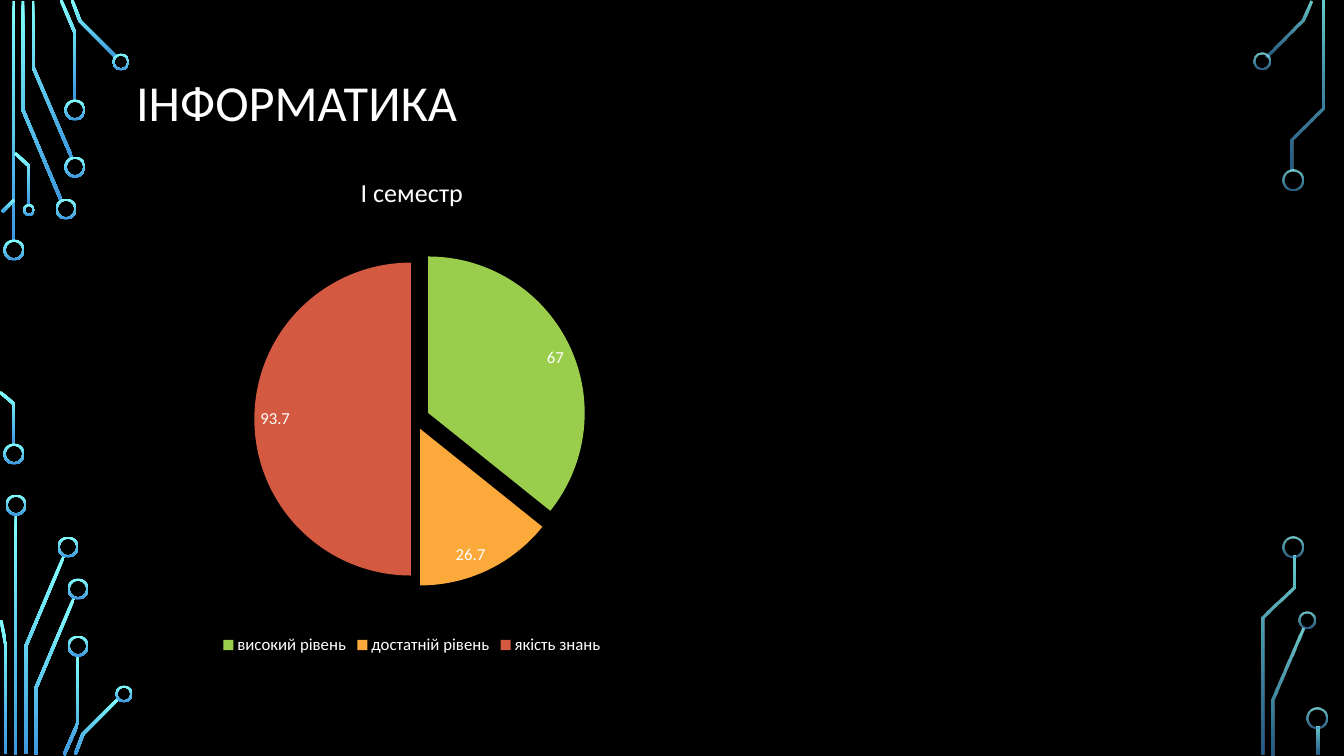
import math

import pptx
import pptx.chart.data
import pptx.dml.color
import pptx.enum.chart
import pptx.enum.shapes
import pptx.enum.text
import pptx.oxml
import pptx.oxml.ns
import pptx.util

RGBColor = pptx.dml.color.RGBColor
BLACK = RGBColor(0x00, 0x00, 0x00)
WHITE = RGBColor(0xFF, 0xFF, 0xFF)
CYAN = RGBColor(0x82, 0xFF, 0xFF)
BLUE = RGBColor(0x3D, 0x97, 0xDE)
GREEN = RGBColor(0x9A, 0xCD, 0x4C)
ORANGE = RGBColor(0xFA, 0xA9, 0x3A)
RED = RGBColor(0xD3, 0x59, 0x40)
FONT = "Calibri"
PX = 914400 / 100.8
TRACE_WIDTH = 3
MIDDLE_X = 672


def paint_circuit(shape, center_x):
    """Fill a circuit part with the gradient, fainter on the right side."""
    shape.shadow.inherit = False
    shape.line.fill.background()
    shape.fill.gradient()
    shape.fill.gradient_angle = 270
    for stop, color, opacity in zip(shape.fill.gradient_stops, (CYAN, BLUE), (80, 60)):
        stop.color.rgb = color
        if center_x > MIDDLE_X:
            for node in shape._element.iter(pptx.oxml.ns.qn("a:srgbClr")):
                if node.get("val") == str(color):
                    alpha = node.makeelement(pptx.oxml.ns.qn("a:alpha"), {"val": str(opacity * 1000)})
                    node.append(alpha)


def trace_side(points):
    """Shift a centre line to its left by half the trace width, with mitred corners."""
    angles = [math.atan2(y2 - y1, x2 - x1) for (x1, y1), (x2, y2) in zip(points, points[1:])]
    side = []
    for (x, y), before, after in zip(points, angles[:1] + angles, angles + angles[-1:]):
        turn = (before + after) / 2
        reach = TRACE_WIDTH / 2 / math.cos((after - before) / 2)
        side.append((x + reach * math.sin(turn), y - reach * math.cos(turn)))
    return side


deck = pptx.Presentation()
deck.slide_width, deck.slide_height = round(1344 * PX), round(756 * PX)
page = deck.slides.add_slide(deck.slide_layouts[5])
page.background.fill.solid()
page.background.fill.fore_color.rgb = BLACK

# Circuit traces, as centre lines
traces = [
    [(14, 1), (14, 241)],
    [(23, 1), (23, 110), (61, 200)],
    [(33, 1), (33, 67), (72, 158)],
    [(61, 0), (75, 33), (75, 100)],
    [(72, 0), (80, 21), (116, 57)],
    [(2, 212), (14, 200)],
    [(0, 392), (14, 404), (14, 444)],
    [(15, 153), (29, 166), (29, 205)],
    [(16, 514), (16, 755)],
    [(64, 556), (26, 646), (26, 754)],
    [(1, 620), (6, 646), (6, 754)],
    [(74, 598), (36, 688), (36, 755)],
    [(78, 655), (78, 723), (64, 755)],
    [(119, 698), (83, 734), (75, 755)],
    [(1311, 1), (1303, 20), (1267, 56)],
    [(1303, 628), (1273, 699), (1273, 755)],
    [(1323, 1), (1323, 108), (1292, 139), (1292, 170)],
    [(1294, 556), (1294, 588), (1263, 618), (1263, 755)],
    [(1318, 727), (1318, 755)],
]
for points in traces:
    outline = trace_side(points) + trace_side(points[::-1])
    corners = [(x * PX, y * PX) for x, y in outline]
    builder = page.shapes.build_freeform(*corners[0])
    builder.add_line_segments(corners[1:], close=True)
    paint_circuit(builder.convert_to_shape(), points[0][0])

# Circuit rings: centre x, centre y, diameter
rings = [
    (14, 250, 21), (14, 454, 21), (66, 209, 21), (75, 167, 21), (75, 110, 21),
    (121, 62, 17), (29, 210, 12), (16, 505, 21), (68, 547, 21), (78, 589, 21),
    (78, 646, 21), (124, 694, 17), (1262, 61, 17), (1293, 180, 21),
    (1307, 620, 17), (1293, 547, 21), (1317, 718, 21),
]
for x, y, size in rings:
    frame = [round(value * PX) for value in (x - size / 2, y - size / 2, size, size)]
    ring = page.shapes.add_shape(pptx.enum.shapes.MSO_SHAPE.DONUT, *frame)
    ring.adjustments[0] = 2 / size
    paint_circuit(ring, x)

# Title
title = page.shapes.title
place = {"left": 126, "top": 24, "width": 1092, "height": 163}
for name, value in place.items():
    setattr(title, name, round(value * PX))
box = title.text_frame
box.text = "ІНФОРМАТИКА"
box.word_wrap = True
box.auto_size = pptx.enum.text.MSO_AUTO_SIZE.NONE
box.vertical_anchor = pptx.enum.text.MSO_ANCHOR.MIDDLE
para = box.paragraphs[0]
para.alignment = pptx.enum.text.PP_ALIGN.LEFT
para.line_spacing = 0.9

# Pie chart
data = pptx.chart.data.CategoryChartData()
data.categories = ["високий рівень", "достатній рівень", "якість знань"]
data.add_series("І семестр", (67, 26.7, 93.7))
frame = [round(value * PX) for value in (52, 154, 720, 505)]
chart = page.shapes.add_chart(pptx.enum.chart.XL_CHART_TYPE.PIE, *frame, data).chart
chart.has_title = True
chart.chart_title.text_frame.text = "І семестр"
chart.chart_title.include_in_layout = False
chart.has_legend = True
chart.legend.position = pptx.enum.chart.XL_LEGEND_POSITION.BOTTOM
chart.legend.include_in_layout = False
plot = chart.plots[0]
plot.vary_by_categories = True
series = plot.series[0]
labels = series.data_labels
labels.show_value = True
labels.show_percentage = False
labels.position = pptx.enum.chart.XL_LABEL_POSITION.INSIDE_END

# Slice colours and explosion
explosion_tag = pptx.oxml.ns.qn("c:explosion")
for index, (color, percent) in enumerate([(GREEN, 9), (ORANGE, 7), (RED, 3)]):
    slice_format = series.points[index].format
    slice_format.fill.solid()
    slice_format.fill.fore_color.rgb = color
    slice_format.line.fill.background()
    point = series._element.findall(pptx.oxml.ns.qn("c:dPt"))[index]
    explosion = point.makeelement(explosion_tag, {"val": str(percent)})
    point.find(pptx.oxml.ns.qn("c:spPr")).addprevious(explosion)
first_point = series._element.find(pptx.oxml.ns.qn("c:dPt"))
first_point.addprevious(first_point.makeelement(explosion_tag, {"val": "21"}))

# Plot area position within the chart
plot_area = plot._element.getparent()
for layout in plot_area.findall(pptx.oxml.ns.qn("c:layout")):
    plot_area.remove(layout)
plot_area.insert(0, pptx.oxml.parse_xml(
    f'<c:layout {pptx.oxml.ns.nsdecls("c")}><c:manualLayout><c:layoutTarget val="inner"/>'
    '<c:xMode val="edge"/><c:yMode val="edge"/><c:x val="0.24"/><c:y val="0.15"/>'
    '<c:w val="0.53"/><c:h val="0.75"/></c:manualLayout></c:layout>'))

# Fonts
chart_title_font = chart.chart_title.text_frame.paragraphs[0].runs[0].font
fonts = [(para.runs[0].font, 36), (chart.font, 10), (chart_title_font, 18.6),
         (chart.legend.font, 12), (labels.font, 12)]
for font, size in fonts:
    for name, value in {"name": FONT, "size": pptx.util.Pt(size), "bold": False}.items():
        setattr(font, name, value)
    font.color.rgb = WHITE

deck.save("out.pptx")
